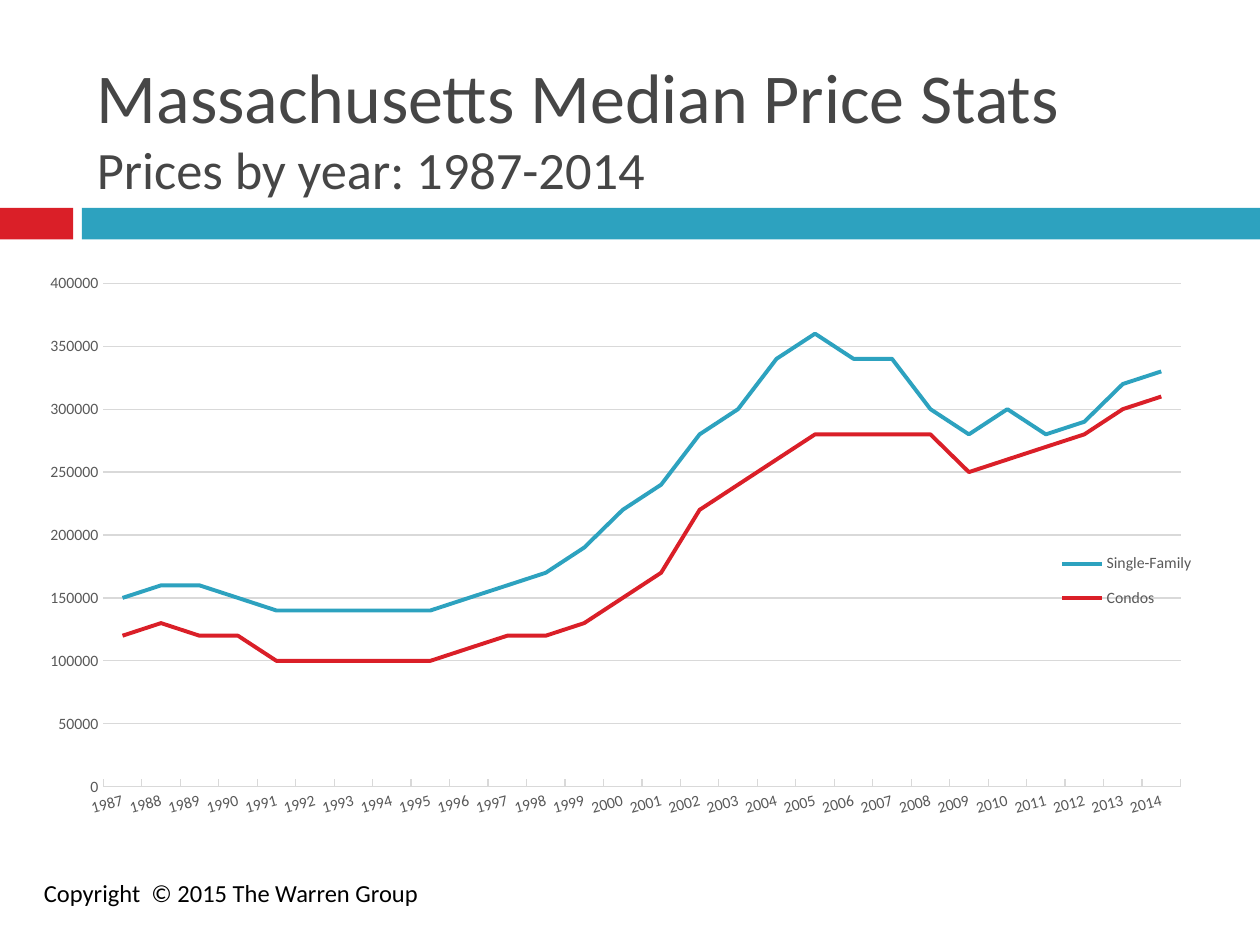
"""Build a slide with a line chart of Massachusetts median home prices by year."""
from pptx import Presentation
from pptx.chart.data import CategoryChartData as ChartData
from pptx.dml.color import RGBColor
from pptx.enum.chart import XL_CHART_TYPE as ChartType
from pptx.enum.chart import XL_LEGEND_POSITION as LegendPosition
from pptx.enum.chart import XL_TICK_MARK as TickMark
from pptx.enum.shapes import MSO_SHAPE as Preset
from pptx.enum.text import MSO_ANCHOR as Anchor
from pptx.oxml import parse_xml
from pptx.oxml.ns import nsdecls, qn
from pptx.util import Inches, Pt

WIDTH, HEIGHT = Inches(10), Inches(7.5)
RED = RGBColor(0xDA, 0x1F, 0x28)
TEAL = RGBColor(0x2D, 0xA2, 0xBF)
TITLE_GRAY = RGBColor(0x46, 0x46, 0x46)
LABEL_GRAY = RGBColor(0x59, 0x59, 0x59)
GRID_GRAY = RGBColor(0xD9, 0xD9, 0xD9)
BLACK = RGBColor(0, 0, 0)

YEARS = [str(year) for year in range(1987, 2015)]
PRICES_IN_TEN_THOUSANDS = {
    "Single-Family": [15, 16, 16, 15, 14, 14, 14, 14, 14, 15, 16, 17, 19, 22,
                      24, 28, 30, 34, 36, 34, 34, 30, 28, 30, 28, 29, 32, 33],
    "Condos": [12, 13, 12, 12, 10, 10, 10, 10, 10, 11, 12, 12, 13, 15,
               17, 22, 24, 26, 28, 28, 28, 28, 25, 26, 27, 28, 30, 31],
}
SERIES_COLORS = (TEAL, RED)
LABEL_FORMAT = {"name": "Calibri", "size": Pt(9), "bold": False}


def set_font(font, color, formats):
    """Apply a dict of format values and a colour to a font."""
    for attribute, value in formats.items():
        setattr(font, attribute, value)
    font.color.rgb = color


def set_line(line, color, points):
    """Give a line its colour and width."""
    line.color.rgb = color
    line.width = Pt(points)


def add_band(slide, left, width, color):
    """Add one block of the band below the title."""
    band = slide.shapes.add_shape(
        Preset.RECTANGLE, int(WIDTH * left), int(HEIGHT * 0.22),
        int(WIDTH * width), Inches(0.25))
    band.shadow.inherit = False
    band.fill.solid()
    band.fill.fore_color.rgb = color
    band.line.fill.background()


def add_text(slide, box, lines, color, anchor=Anchor.TOP):
    """Add one paragraph whose lines are pairs of text and point size."""
    frame = slide.shapes.add_textbox(*map(Inches, box)).text_frame
    frame.word_wrap = True
    frame.vertical_anchor = anchor
    paragraph = frame.paragraphs[0]
    for index, (text, size) in enumerate(lines):
        if index:
            paragraph.add_line_break()
        run = paragraph.add_run()
        run.text = text
        set_font(run.font, color, {"name": "Calibri", "size": Pt(size)})


def place(element, index, shares, inner=False):
    """Give a chart part a manual layout in shares of the chart."""
    for old in element.findall(qn("c:layout")):
        element.remove(old)
    target = '<c:layoutTarget val="inner"/>' if inner else ""
    modes = '<c:xMode val="edge"/><c:yMode val="edge"/>'
    sizes = "".join(f'<c:{key} val="{share}"/>' for key, share in zip("xywh", shares))
    element.insert(index, parse_xml(
        f'<c:layout {nsdecls("c")}><c:manualLayout>{target}{modes}{sizes}'
        '</c:manualLayout></c:layout>'))


def format_axes(chart):
    """Style the year axis and the price axis."""
    years, prices = chart.category_axis, chart.value_axis
    for axis, mark in ((years, TickMark.INSIDE), (prices, TickMark.NONE)):
        axis.major_tick_mark = mark
        axis.minor_tick_mark = TickMark.NONE
        set_font(axis.tick_labels.font, LABEL_GRAY, LABEL_FORMAT)
    set_line(years.format.line, GRID_GRAY, 0.75)
    years._element.find(qn("c:txPr")).find(qn("a:bodyPr")).set("rot", str(-15 * 60000))
    scale = {"minimum_scale": 0, "maximum_scale": 400000, "major_unit": 50000}
    for attribute, value in scale.items():
        setattr(prices, attribute, value)
    prices.format.line.fill.background()
    set_line(prices.major_gridlines.format.line, GRID_GRAY, 0.75)
    prices.tick_labels.number_format = "0"
    prices.tick_labels.number_format_is_linked = False


def add_price_chart(slide, box):
    """Add the line chart of median prices."""
    data = ChartData()
    data.categories = YEARS
    for name, prices in PRICES_IN_TEN_THOUSANDS.items():
        data.add_series(name, [price * 10000 for price in prices])
    chart = slide.shapes.add_chart(ChartType.LINE, *map(Inches, box), data).chart
    set_font(chart.font, BLACK, {"name": "Calibri", "size": Pt(10)})
    chart.has_title = False
    chart.plots[0].vary_by_categories = False
    for series, color in zip(chart.plots[0].series, SERIES_COLORS):
        series.smooth = False
        set_line(series.format.line, color, 2.25)
    format_axes(chart)
    chart.has_legend = True
    legend = chart.legend
    legend.position = LegendPosition.BOTTOM
    legend.include_in_layout = False
    set_font(legend.font, LABEL_GRAY, LABEL_FORMAT)
    place(legend._element, 1, (0.85, 0.49, 0.13, 0.13))
    plot_area = chart._chartSpace.find(qn("c:chart")).find(qn("c:plotArea"))
    place(plot_area, 0, (0.06, 0.1, 0.9, 0.77), inner=True)


def main():
    """Build and save the slide."""
    deck = Presentation()
    deck.slide_width, deck.slide_height = WIDTH, HEIGHT
    slide = deck.slides.add_slide(deck.slide_layouts[6])
    add_band(slide, 0, 0.058, RED)
    add_band(slide, 0.065, 0.935, TEAL)
    headline = [("Massachusetts Median Price Stats", 40), ("Prices by year: 1987-2014", 30)]
    add_text(slide, (0.67, 0.17, 8.92, 1.47), headline, TITLE_GRAY, Anchor.BOTTOM)
    add_text(slide, (0.25, 6.92, 4, 0.34),
             [("Copyright  © 2015 The Warren Group", 14)], BLACK)
    add_price_chart(slide, (0.25, 1.73, 9.5, 5.19))
    deck.save("out.pptx")


if __name__ == "__main__":
    main()
